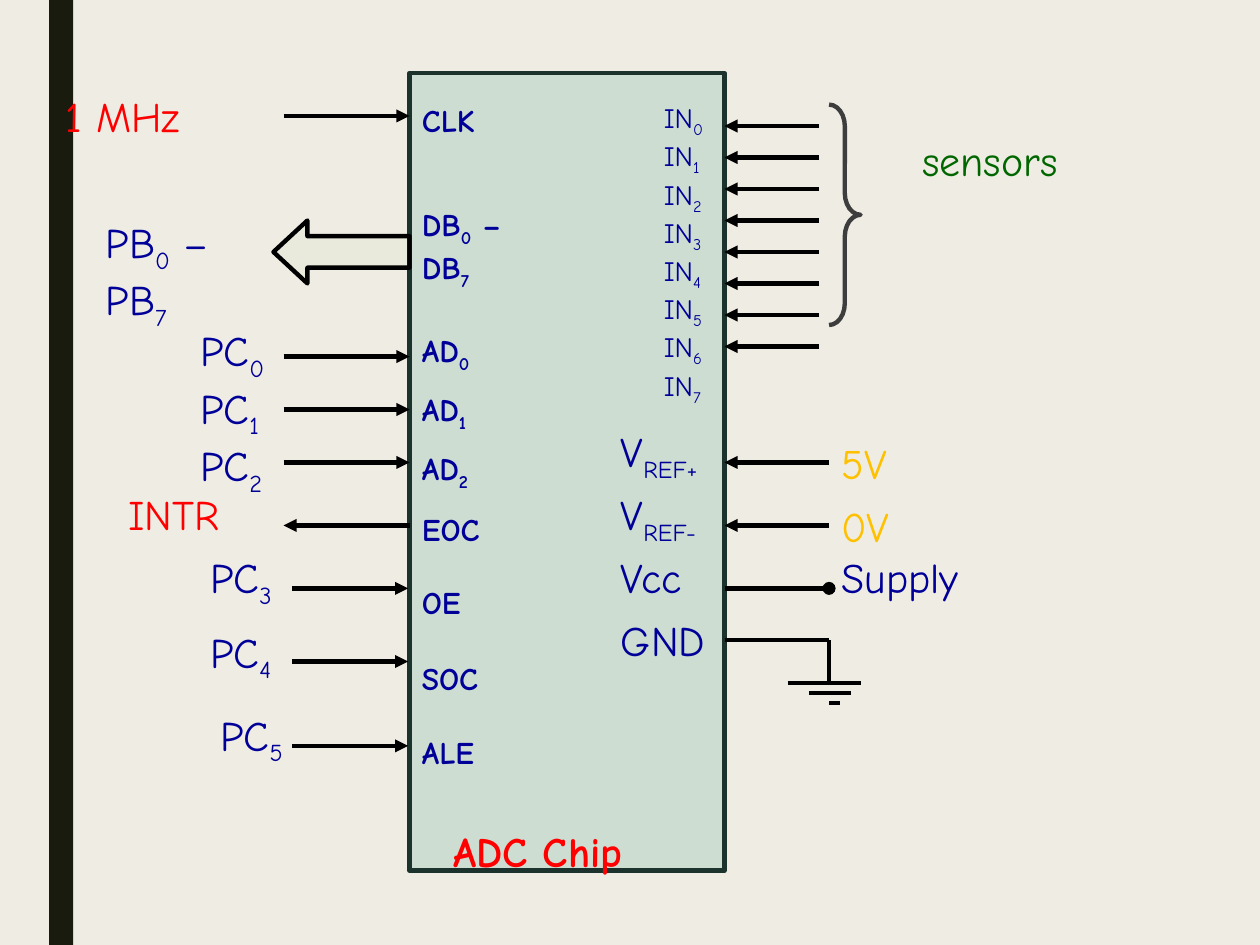
from lxml import etree
from pptx import Presentation
from pptx.dml.color import RGBColor
from pptx.enum.shapes import MSO_CONNECTOR as CONNECTOR, MSO_SHAPE as SHAPE
from pptx.enum.text import MSO_ANCHOR as ANCHOR, MSO_AUTO_SIZE as AUTO_SIZE
from pptx.oxml.ns import qn
from pptx.util import Inches, Pt

FONT = "Comic Neue"
CREAM = RGBColor(0xEF, 0xED, 0xE3)
BAR = RGBColor(0x19, 0x1B, 0x0E)
TEAL = RGBColor(0x74, 0xB5, 0xA2)
DARK_TEAL = RGBColor(0x1B, 0x33, 0x2C)
GREEN = RGBColor(0x8C, 0xB6, 0x4A)
GRAY = RGBColor(0x3D, 0x3D, 0x3D)
BLACK = RGBColor(0, 0, 0)
NAVY = RGBColor(0, 0, 0x99)
RED = RGBColor(0xFF, 0, 0)
SENSOR_GREEN = RGBColor(0, 0x66, 0)
AMBER = RGBColor(0xFF, 0xC0, 0)

CHIP_LEFT, CHIP_RIGHT = 3.25, 5.75
LINE_WIDTH = Pt(2.5)


def add_runs(p, text, size, color, bold):
    """Add text to p; parts between ~ marks are subscripts."""
    for i, part in enumerate(text.split("~")):
        if not part:
            continue
        r = p.add_run()
        r.text = part
        font = r.font
        font.name, font.size, font.bold = FONT, Pt(size), bold
        font.color.rgb = color
        if i % 2:
            font._element.set("baseline", "-25000")


def add_text(slide, text, left, top, width, height=0.5, size=24,
             color=NAVY, bold=False):
    """Add a text box; a blank line parts paragraphs, a newline parts lines."""
    s = slide.shapes.add_textbox(Inches(left), Inches(top), Inches(width), Inches(height))
    tf = s.text_frame
    tf.word_wrap = True
    tf.auto_size = AUTO_SIZE.SHAPE_TO_FIT_TEXT
    tf.vertical_anchor = ANCHOR.TOP
    for i, paragraph in enumerate(text.split("\n\n")):
        p = tf.add_paragraph() if i else tf.paragraphs[0]
        if i:
            p.space_before = Pt(size / 2)
        for j, line in enumerate(paragraph.split("\n")):
            if j:
                p.add_line_break()
            add_runs(p, line, size, color, bold)
    return s


def add_shape(slide, kind, left, top, width, height, fill=None, opacity=100,
              line=None, adjustments=()):
    s = slide.shapes.add_shape(kind, Inches(left), Inches(top), Inches(width), Inches(height))
    s.shadow.inherit = False
    for i, value in enumerate(adjustments):
        s.adjustments[i] = value
    if fill is None:
        s.fill.background()
    else:
        s.fill.solid()
        s.fill.fore_color.rgb = fill
        if opacity < 100:
            clr = s._element.spPr.find(qn("a:solidFill")).find(qn("a:srgbClr"))
            etree.SubElement(clr, qn("a:alpha"), val=str(opacity * 1000))
    if line is None:
        s.line.fill.background()
    else:
        s.line.color.rgb = line
        s.line.width = LINE_WIDTH
    return s


def add_wire(slide, x1, y1, x2, y2, end=None):
    """Add a straight line; end is the arrowhead type at its second point."""
    c = slide.shapes.add_connector(CONNECTOR.STRAIGHT, Inches(x1), Inches(y1),
                                   Inches(x2), Inches(y2))
    c.line.color.rgb = BLACK
    c.line.width = LINE_WIDTH
    if end:
        etree.SubElement(c.line._get_or_add_ln(), qn("a:tailEnd"), type=end)
    etree.SubElement(c._element.spPr, qn("a:effectLst"))
    return c


def add_chip(slide):
    add_shape(slide, SHAPE.RECTANGLE, CHIP_LEFT, 0.58, CHIP_RIGHT - CHIP_LEFT, 6.33,
              fill=TEAL, opacity=27, line=DARK_TEAL)
    add_text(slide, "ADC Chip", 3.5, 6.5, 1.92, color=RED, bold=True)


def add_left_pins(slide):
    for text, top, height in (
        ("CLK", 0.75, 0.4),
        ("DB~0~ –\nDB~7~", 1.58, 0.7),
        ("AD~0~\n\nAD~1~\n\nAD~2~", 2.58, 1.3),
        ("EOC", 4, 0.4),
        ("OE", 4.58, 0.4),
        ("SOC", 5.18, 0.4),
        ("ALE", 5.77, 0.4),
    ):
        add_text(slide, text, CHIP_LEFT, top, 1.08, height, size=18, bold=True)


def add_left_signals(slide):
    for y in (0.92, 2.83, 3.25, 3.67):
        add_wire(slide, 2.25, y, CHIP_LEFT, y, "triangle")
    add_wire(slide, CHIP_LEFT, 4.17, 2.25, 4.17, "triangle")
    for y in (4.67, 5.25, 5.92):
        add_wire(slide, 2.32, y, 3.24, y, "triangle")
    add_shape(slide, SHAPE.LEFT_ARROW, 2.17, 1.75, 1.08, 0.5, fill=GREEN, opacity=5,
              line=BLACK, adjustments=(0.5, 0.54))

    add_text(slide, "1 MHz", 0.42, 0.67, 2.08, color=RED)
    add_text(slide, "PB~0~ –\nPB~7~", 0.74, 1.67, 1.5, 0.9)
    add_text(slide, "PC~0~\nPC~1~\nPC~2~", 1.49, 2.53, 1.17, 1.3)
    add_text(slide, "INTR", 0.92, 3.83, 1.42, color=RED)
    for n, left, top in ((3, 1.57, 4.33), (4, 1.57, 4.92), (5, 1.65, 5.58)):
        add_text(slide, f"PC~{n}~", left, top, 1.17)


def add_sensor_inputs(slide):
    for n in range(8):
        y = 1 + 0.25 * n
        add_wire(slide, 6.5, y, CHIP_RIGHT, y, "triangle")
    labels = "\n".join(f"IN~{n}~" for n in range(8))
    add_text(slide, labels, 5.17, 0.75, 0.75, 2.24, size=16)
    add_shape(slide, SHAPE.RIGHT_BRACE, 6.58, 0.83, 0.25, 1.75, line=GRAY,
              adjustments=(0.69, 0.5))
    add_text(slide, " sensors", 7.11, 1.02, 1.75, color=SENSOR_GREEN)


def add_power(slide):
    for i, pin in enumerate(("V~REF+~", "V~REF-~", "Vcc", "GND")):
        add_text(slide, pin, 4.83, 3.33 + 0.5 * i, 1.17)
    for volts, y in (("5V", 3.67), ("0V", 4.17)):
        add_wire(slide, 6.58, y, CHIP_RIGHT, y, "triangle")
        add_text(slide, volts, 6.58, y - 0.25, 1.17, color=AMBER)
    add_wire(slide, CHIP_RIGHT, 4.67, 6.58, 4.67, "oval")
    add_text(slide, "Supply", 6.58, 4.33, 1.58)


def add_ground(slide):
    add_wire(slide, CHIP_RIGHT, 5.08, 6.58, 5.08)
    add_wire(slide, 6.58, 5.08, 6.58, 5.42)
    for x1, x2, y in ((6.25, 6.83, 5.42), (6.42, 6.75, 5.5), (6.58, 6.67, 5.58)):
        add_wire(slide, x1, y, x2, y)


def main():
    prs = Presentation()
    prs.slide_width, prs.slide_height = Inches(10), Inches(7.5)
    slide = prs.slides.add_slide(prs.slide_layouts[6])
    slide.background.fill.solid()
    slide.background.fill.fore_color.rgb = CREAM
    add_shape(slide, SHAPE.RECTANGLE, 0.39, 0, 0.19, 7.5, fill=BAR)
    add_chip(slide)
    add_left_pins(slide)
    add_left_signals(slide)
    add_sensor_inputs(slide)
    add_power(slide)
    add_ground(slide)
    prs.save("out.pptx")


if __name__ == "__main__":
    main()
